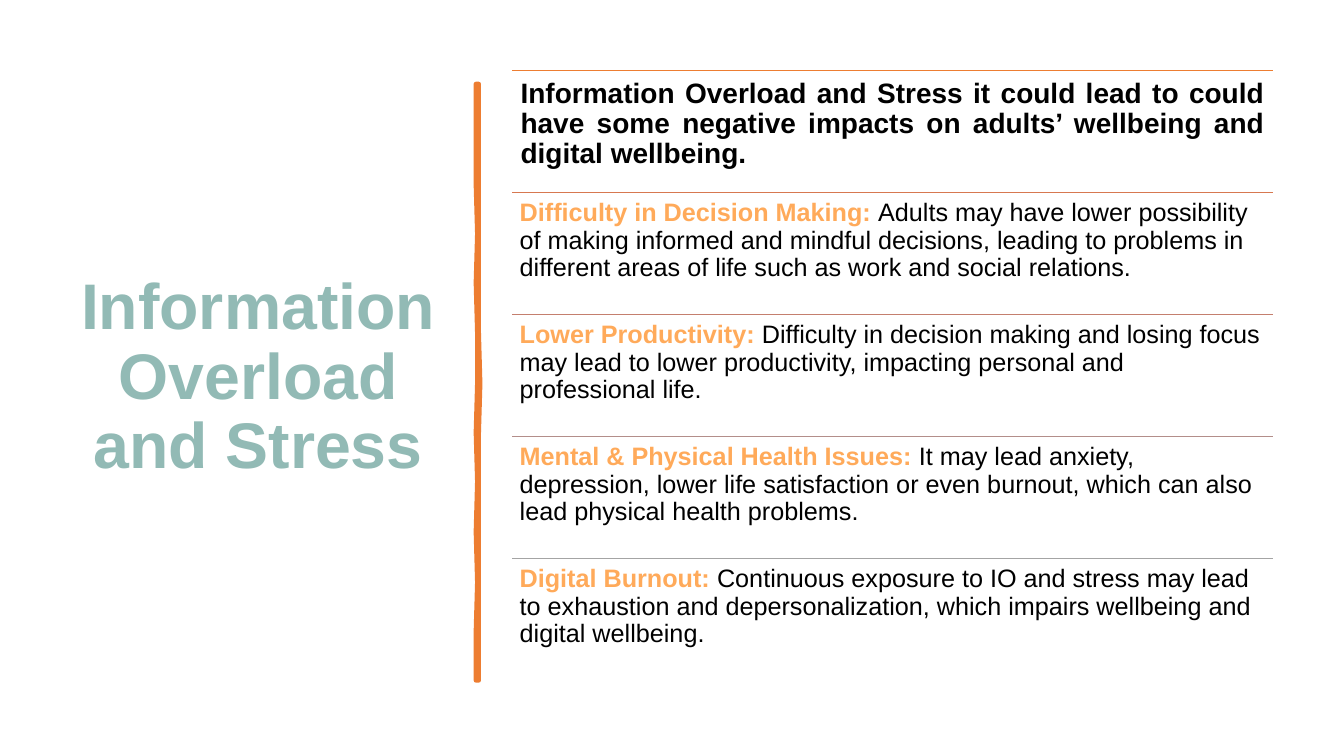
from lxml import etree
from pptx import Presentation
from pptx.dml.color import RGBColor
from pptx.enum.shapes import MSO_CONNECTOR
from pptx.enum.text import MSO_ANCHOR, PP_ALIGN
from pptx.oxml.ns import qn
from pptx.util import Pt

STRAIGHT = MSO_CONNECTOR.STRAIGHT
TOP, MIDDLE = MSO_ANCHOR.TOP, MSO_ANCHOR.MIDDLE
LEFT, CENTER, JUSTIFY = PP_ALIGN.LEFT, PP_ALIGN.CENTER, PP_ALIGN.JUSTIFY

FONT = "Arial"
TEAL = RGBColor(0x92, 0xBA, 0xB5)
ORANGE = RGBColor(0xED, 0x7D, 0x31)
APRICOT = RGBColor(0xFF, 0xAA, 0x5A)
BLACK = RGBColor(0x00, 0x00, 0x00)
RULE_COLORS = [
    ORANGE,
    RGBColor(0xD7, 0x78, 0x50),
    RGBColor(0xC4, 0x7F, 0x6E),
    RGBColor(0xB3, 0x8E, 0x8A),
    RGBColor(0xA4, 0xA4, 0xA4),
]

TITLE = "Information Overload and Stress"
INTRODUCTION = (
    "Information Overload and Stress it could lead to could have some "
    "negative impacts on adults’ wellbeing and digital wellbeing."
)
IMPACTS = [
    ("Difficulty in Decision Making: ",
     "Adults may have lower possibility of making informed and mindful decisions, "
     "leading to problems in different areas of life such as work and social relations."),
    ("Lower Productivity: ",
     "Difficulty in decision making and losing focus may lead to lower productivity, "
     "impacting personal and professional life."),
    ("Mental & Physical Health Issues: ",
     "It may lead anxiety, depression, lower life satisfaction or even burnout, "
     "which can also lead physical health problems."),
    ("Digital Burnout: ",
     "Continuous exposure to IO and stress may lead to exhaustion and "
     "depersonalization, which impairs wellbeing and digital wellbeing."),
]

# Sideways wobble of the brush stroke's two edges, at equal steps downwards
LEFT_WOBBLE = [0, 0, -0.6, 0.2, -0.6, 0.5, 0.2, -0.8, 0.5, -0.5, 0.4, -0.2, 0]
RIGHT_WOBBLE = [0, 0.5, -0.2, 0.4, 0, -0.3, 0.6, -0.3, 0, 0.5, 0, -0.3, 0]


def add_text(slide, box, runs, size, alignment=LEFT, anchor=TOP, insets=(5.4, 5.4)):
    """Add one paragraph of (text, color, bold) runs in a wrapped text box."""
    frame = slide.shapes.add_textbox(*map(Pt, box)).text_frame
    frame.word_wrap = True
    frame.vertical_anchor = anchor
    frame.margin_left = frame.margin_right = Pt(insets[0])
    frame.margin_top = frame.margin_bottom = Pt(insets[1])
    paragraph = frame.paragraphs[0]
    paragraph.alignment = alignment
    paragraph.line_spacing = 0.9
    paragraph.font.name = FONT
    paragraph.font.size = Pt(size)
    for text, color, bold in runs:
        run = paragraph.add_run()
        run.text = text
        run.font.color.rgb = color
        run.font.bold = bold


def add_title(slide, box):
    add_text(slide, box, [(TITLE, TEAL, True)], 46, CENTER, MIDDLE, (7.2, 3.6))


def add_brush_stroke(slide, box):
    """Draw the hand-drawn vertical divider."""
    left, top, width, height = box
    step = height / (len(LEFT_WOBBLE) - 1)
    right_edge = [(left + width + x, top + i * step) for i, x in enumerate(RIGHT_WOBBLE)]
    left_edge = [(left + x, top + i * step) for i, x in enumerate(LEFT_WOBBLE)]
    outline = right_edge + left_edge[::-1]
    builder = slide.shapes.build_freeform(*outline[0], scale=Pt(1))
    builder.add_line_segments(outline[1:], close=True)
    stroke = builder.convert_to_shape()
    stroke.shadow.inherit = False
    stroke.fill.solid()
    stroke.fill.fore_color.rgb = ORANGE
    stroke.line.color.rgb = ORANGE
    stroke.line.width = Pt(3.25)


def add_rule(slide, left, top, width, color):
    rule = slide.shapes.add_connector(
        STRAIGHT, Pt(left), Pt(top), Pt(left + width), Pt(top))
    rule.line.color.rgb = color
    rule.line.width = Pt(1)
    etree.SubElement(rule._element.spPr, qn("a:effectLst"))


def add_impact_list(slide, box):
    """Stack the introduction and the impacts in equal rows, each under a rule."""
    left, top, width, height = box
    row_height = height / len(RULE_COLORS)
    for index, color in enumerate(RULE_COLORS):
        row_top = top + index * row_height
        row = (left, row_top, width, row_height)
        add_rule(slide, left, row_top, width, color)
        if index == 0:
            add_text(slide, row, [(INTRODUCTION, BLACK, True)], 20, JUSTIFY, insets=(6, 6))
        else:
            heading, description = IMPACTS[index - 1]
            add_text(slide, row, [(heading, APRICOT, True), (description, BLACK, False)], 18)


def main():
    presentation = Presentation()
    presentation.slide_width = Pt(960)
    presentation.slide_height = Pt(540)
    slide = presentation.slides.add_slide(presentation.slide_layouts[6])
    add_title(slide, (49.7, 50.4, 269.3, 440))
    add_brush_stroke(slide, (340.5, 60.5, 1.5, 426))
    add_impact_list(slide, (365.8, 50.4, 543.6, 435.6))
    presentation.save("out.pptx")


if __name__ == "__main__":
    main()
